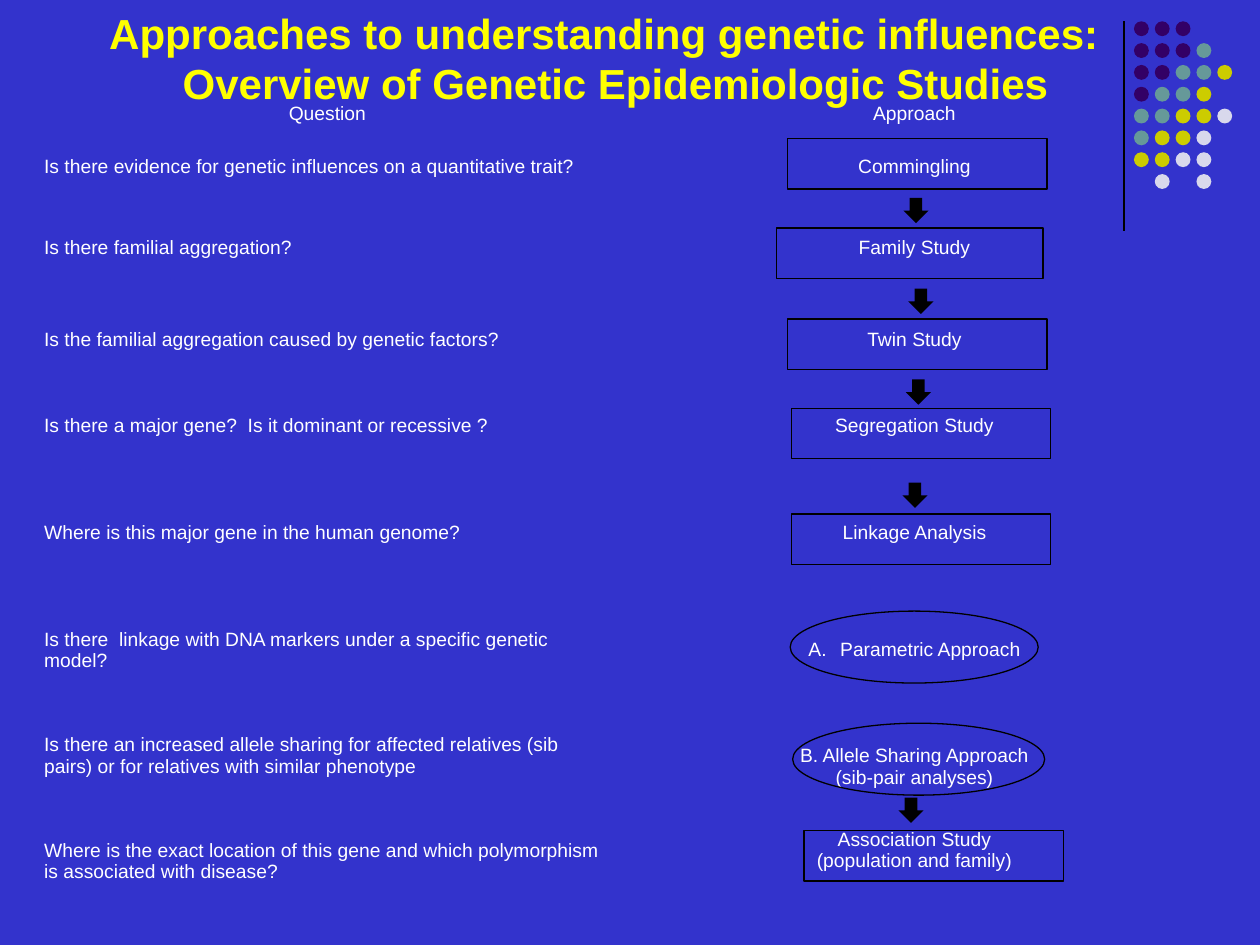
from pptx import Presentation
from pptx.dml.color import RGBColor
from pptx.enum.shapes import MSO_CONNECTOR, MSO_SHAPE
from pptx.enum.text import MSO_ANCHOR, PP_ALIGN
from pptx.oxml.ns import qn
from pptx.util import Cm, Pt
from lxml import etree

LEFT, MID = PP_ALIGN.LEFT, PP_ALIGN.CENTER
RECT, OVAL, DOWN = MSO_SHAPE.RECTANGLE, MSO_SHAPE.OVAL, MSO_SHAPE.DOWN_ARROW
LINE = MSO_CONNECTOR.STRAIGHT

HEX = {
    "back": "3333CC", "title": "FFFF00", "text": "FFFFFF", "black": "000000",
    "P": "330066", "T": "669999", "Y": "CCCC00", "W": "D8D8EC",
}
BODY = {"name": "Arial", "size": Pt(11), "bold": False}
HEAD = {"name": "Arial", "size": Pt(24), "bold": True}

COLS = [11.58, 12.09, 0.23]
ROWS = [
    (0.46, "", ""),
    (0.81, "Question", "Approach"),
    (1.35, "Is there evidence for genetic influences on a quantitative trait?",
     "Commingling"),
    (1.91, "Is there familial aggregation?", "Family Study"),
    (1.8, "Is the familial aggregation caused by genetic factors?", "Twin Study"),
    (1.68, "Is there a major gene?  Is it dominant or recessive ?",
     "Segregation Study"),
    (2.62, "Where is this major gene in the human genome?", "Linkage Analysis"),
    (2.11, "Is there  linkage with DNA markers under a specific genetic model?",
     "Parametric Approach"),
    (2.16, "Is there an increased allele sharing for affected relatives "
     "(sib pairs) or for relatives with similar phenotype",
     "B. Allele Sharing Approach\n(sib-pair analyses)"),
    (2.08, "Where is the exact location of this gene and which polymorphism "
     "is associated with disease?",
     "Association Study\n(population and family)"),
]
BOXES = [
    (15.88, 2.79, 5.23), (15.65, 4.6, 5.38), (15.88, 6.43, 5.23),
    (15.95, 8.23, 5.23), (15.95, 10.36, 5.23), (16.21, 16.74, 5.23),
]
OVALS = [(15.93, 12.32, 5), (15.98, 14.58, 5.08)]
ARROWS = [(18.21, 3.99), (18.31, 5.82), (18.26, 7.65), (18.19, 9.73),
          (18.11, 16.08)]
DOTS = ["PPP", "PPPT", "PPTTY", "PTTY", "TTYYW", "TYYW", "YYWW", " W W"]


def color(key):
    return RGBColor.from_string(HEX[key])


class Deck:
    def __init__(self):
        self.prs = Presentation()
        self.prs.slide_width, self.prs.slide_height = Cm(25.4), Cm(19.05)
        self.slide = self.prs.slides.add_slide(self.prs.slide_layouts[5])
        fill = self.slide.background.fill
        fill.solid()
        fill.fore_color.rgb = color("back")

    def style(self, font, form, key):
        for name, value in form.items():
            setattr(font, name, value)
        font.color.rgb = color(key)

    def title(self, text, x, y, w, h):
        box = self.slide.shapes.title
        box.left, box.top, box.width, box.height = map(Cm, (x, y, w, h))
        frame = box.text_frame
        frame.vertical_anchor = MSO_ANCHOR.BOTTOM
        frame.text = text
        para = frame.paragraphs[0]
        para.alignment = MID
        for run in para.runs:
            self.style(run.font, HEAD, "title")

    def shape(self, kind, x, y, w, h, fill=None, line=None):
        item = self.slide.shapes.add_shape(kind, *map(Cm, (x, y, w, h)))
        item.shadow.inherit = False
        if fill:
            item.fill.solid()
            item.fill.fore_color.rgb = color(fill)
        else:
            item.fill.background()
        if line:
            item.line.color.rgb = color(line)
            item.line.width = Pt(0.75)
        else:
            item.line.fill.background()

    def rule(self, x, top, end):
        item = self.slide.shapes.add_connector(
            LINE, Cm(x), Cm(top), Cm(x), Cm(end))
        item.line.color.rgb = color("black")
        item.line.width = Pt(0.75)
        etree.SubElement(item._element.spPr, qn("a:effectLst"))

    def cell(self, cell, text, align):
        props = cell._tc.get_or_add_tcPr()
        for side in ("lnL", "lnR", "lnT", "lnB"):
            edge = etree.SubElement(props, qn("a:" + side))
            etree.SubElement(edge, qn("a:noFill"))
        cell.fill.background()
        cell.vertical_anchor = MSO_ANCHOR.MIDDLE
        cell.margin_left = cell.margin_right = Cm(0.08)
        cell.margin_top = cell.margin_bottom = 0
        cell.text = text
        for para in cell.text_frame.paragraphs:
            para.alignment = align
            self.style(para.font, BODY, "text")
            for run in para.runs:
                self.style(run.font, BODY, "text")

    def letter(self, cell):
        props = cell.text_frame.paragraphs[0]._p.get_or_add_pPr()
        props.set("marL", str(Cm(0.64)))
        props.set("indent", str(-Cm(0.64)))
        mark = etree.Element(qn("a:buAutoNum"), type="alphaUcPeriod")
        props.insert(0, mark)

    def table(self, x, y):
        high = sum(row[0] for row in ROWS)
        frame = self.slide.shapes.add_table(
            len(ROWS), len(COLS), *map(Cm, (x, y, sum(COLS), high)))
        grid = frame.table
        grid.first_row = grid.horz_banding = False
        for col, wide in zip(grid.columns, COLS):
            col.width = Cm(wide)
        for i, (tall, ask, how) in enumerate(ROWS):
            grid.rows[i].height = Cm(tall)
            self.cell(grid.cell(i, 0), ask, MID if i == 1 else LEFT)
            self.cell(grid.cell(i, 1), how, MID)
            self.cell(grid.cell(i, 2), "", LEFT)
        grid.cell(0, 0).merge(grid.cell(0, 2))
        self.letter(grid.cell(7, 1))
        grid.cell(8, 1).margin_top = Cm(0.43)
        grid.cell(9, 1).margin_bottom = Cm(0.43)


def main():
    deck = Deck()
    deck.rule(22.66, 0.43, 4.65)
    for i, row in enumerate(DOTS):
        for j, key in enumerate(row):
            if key in HEX:
                deck.shape(OVAL, 22.86 + 0.42 * j, 0.43 + 0.44 * i,
                           0.3, 0.3, fill=key)
    deck.table(0.81, 1.42)
    deck.title("Approaches to understanding genetic influences:  \v"
               "Overview of Genetic Epidemiologic Studies", 0, 0, 24.82, 2.31)
    for x, y in ARROWS:
        deck.shape(DOWN, x, y, 0.51, 0.51, fill="black")
    for x, y, w in BOXES:
        deck.shape(RECT, x, y, w, 1.02, line="black")
    for x, y, w in OVALS:
        deck.shape(OVAL, x, y, w, 1.45, line="black")
    deck.prs.save("out.pptx")


if __name__ == "__main__":
    main()
